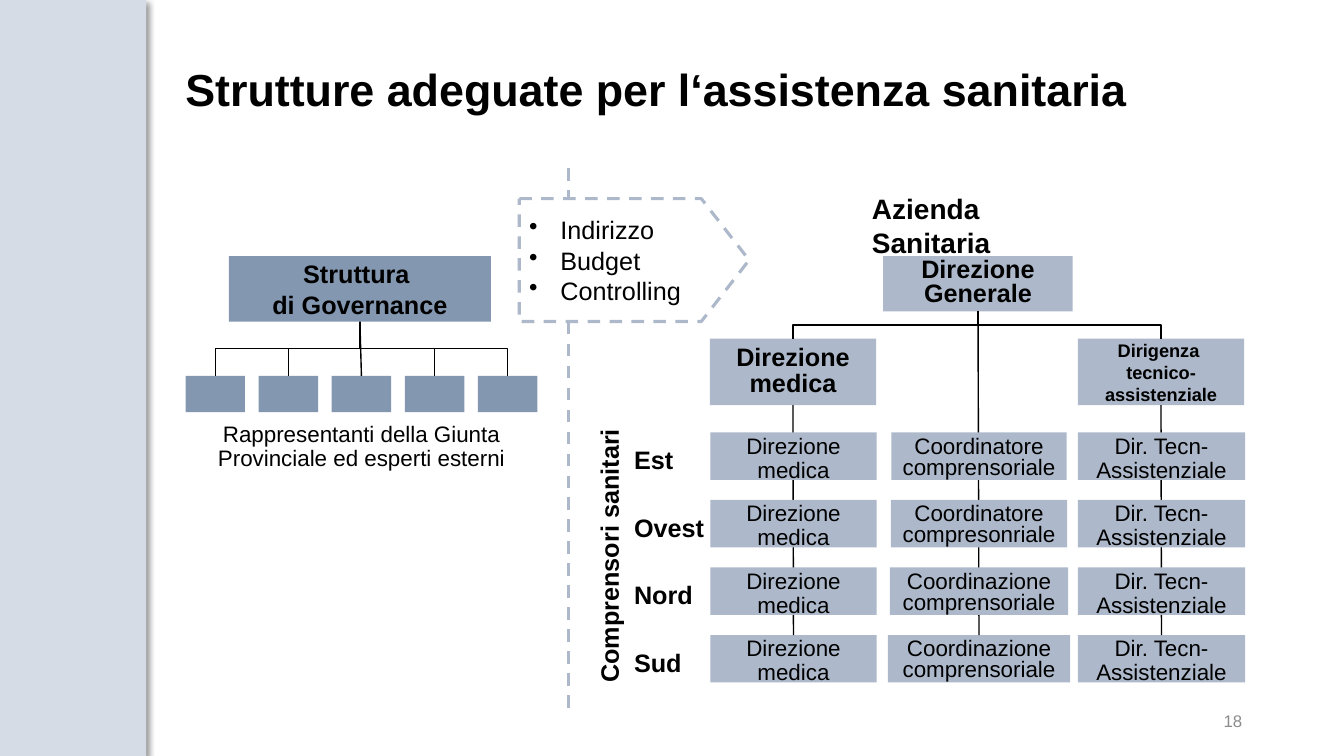
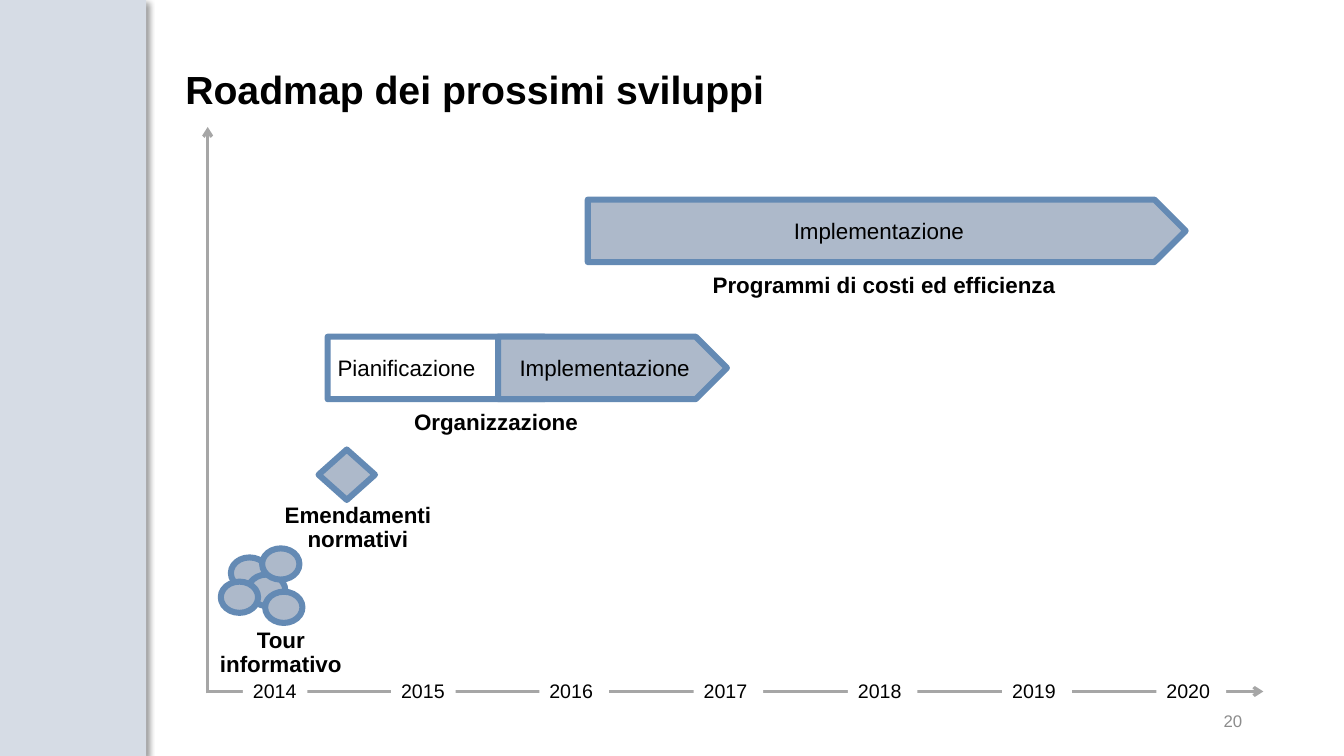
import lxml.etree
import pptx
import pptx.dml.color
import pptx.enum.dml
import pptx.enum.shapes
import pptx.enum.text
import pptx.oxml.ns
import pptx.util

Inches = pptx.util.Inches
Pt = pptx.util.Pt
qn = pptx.oxml.ns.qn
SHAPE = pptx.enum.shapes.MSO_SHAPE
CONNECTOR = pptx.enum.shapes.MSO_CONNECTOR
ALIGN = pptx.enum.text.PP_ALIGN
ANCHOR = pptx.enum.text.MSO_ANCHOR
DASH = pptx.enum.dml.MSO_LINE.DASH

# Shared look
FONT = "Arial"
BLACK, WHITE = "000000", "FFFFFF"
PALE, SOFT, STRONG = "D6DCE5", "ADB9CA", "8497B0"
OUTLINE, AXIS, MUTED = "648AB4", "A6A6A6", "8C8C8C"
OUTLINE_WIDTH = 4.33


def color(hex_value):
    return pptx.dml.color.RGBColor.from_string(hex_value)


# Text
def write(shape, lines, size, bold=False, align=ALIGN.LEFT, spacing=None,
          anchor=ANCHOR.MIDDLE, ink=BLACK, bullet=False):
    frame = shape.text_frame
    frame.word_wrap = True
    frame.vertical_anchor = anchor
    for index, line in enumerate(lines):
        paragraph = frame.paragraphs[0] if index == 0 else frame.add_paragraph()
        paragraph.alignment = align
        if spacing:
            paragraph.line_spacing = spacing
        if bullet:
            properties = paragraph._p.get_or_add_pPr()
            properties.set("marL", str(Inches(0.31)))
            properties.set("indent", str(-Inches(0.31)))
            lxml.etree.SubElement(properties, qn("a:buChar")).set("char", "•")
        run = paragraph.add_run()
        run.text = line
        run.font.name = FONT
        run.font.size = Pt(size)
        run.font.bold = bold
        run.font.color.rgb = color(ink)


def add_label(slide, left, top, width, height, text, size, bold=True,
              anchor=ANCHOR.TOP, **style):
    label = slide.shapes.add_textbox(
        Inches(left), Inches(top), Inches(width), Inches(height))
    write(label, [text], size, bold, anchor=anchor, **style)
    return label


# Shapes
def add_block(slide, left, top, width, height, fill=None, kind=SHAPE.RECTANGLE,
              outline=None, weight=OUTLINE_WIDTH):
    block = slide.shapes.add_shape(
        kind, Inches(left), Inches(top), Inches(width), Inches(height))
    block.shadow.inherit = False
    if fill:
        block.fill.solid()
        block.fill.fore_color.rgb = color(fill)
    else:
        block.fill.background()
    if outline:
        block.line.color.rgb = color(outline)
        block.line.width = Pt(weight)
    else:
        block.line.fill.background()
    return block


def add_box(slide, left, top, width, height, fill, lines, size, bold=True,
            spacing=None):
    box = add_block(slide, left, top, width, height, fill)
    write(box, lines, size, bold, ALIGN.CENTER, spacing)
    return box


# Lines
def style_line(line, ink, weight, dash=None, arrow=False):
    line.line.color.rgb = color(ink)
    line.line.width = Pt(weight)
    if dash:
        line.line.dash_style = dash
    properties = line._element.spPr
    if arrow:
        end = lxml.etree.SubElement(properties.find(qn("a:ln")), qn("a:tailEnd"))
        end.set("type", "arrow")
    lxml.etree.SubElement(properties, qn("a:effectLst"))


def add_line(slide, x1, y1, x2, y2, ink, **style):
    line = slide.shapes.add_connector(
        CONNECTOR.STRAIGHT, Inches(x1), Inches(y1), Inches(x2), Inches(y2))
    style_line(line, ink, 2.25, **style)


def link(slide, upper, lower, kind=CONNECTOR.STRAIGHT):
    line = slide.shapes.add_connector(kind, 0, 0, 0, 0)
    line.begin_connect(upper, 2)
    line.end_connect(lower, 0)
    if kind == CONNECTOR.ELBOW:
        turn_downward(line)
    style_line(line, BLACK, 1)


def turn_downward(line):
    """Rotate an elbow so that it leaves and arrives vertically."""
    across, down = line.end_x - line.begin_x, line.end_y - line.begin_y
    middle_x = (line.begin_x + line.end_x) // 2
    middle_y = (line.begin_y + line.end_y) // 2
    line.left, line.top = middle_x - down // 2, middle_y - abs(across) // 2
    line.width, line.height = down, abs(across)
    frame = line._element.spPr.find(qn("a:xfrm"))
    frame.attrib.pop("flipV", None)
    frame.set("rot", str((270 if across > 0 else 90) * 60000))
    frame.set("flipH", "1" if across > 0 else "0")


# Elements common to every slide
def add_sidebar(slide):
    sidebar = add_block(slide, 0, 0, 1.45, 7.5, PALE)
    effects = sidebar._element.spPr.find(qn("a:effectLst"))
    shadow = lxml.etree.SubElement(effects, qn("a:outerShdw"))
    for key, value in (("blurRad", Pt(4)), ("dist", Pt(3)),
                       ("dir", 45 * 60000), ("rotWithShape", 0)):
        shadow.set(key, str(value))
    tint = lxml.etree.SubElement(shadow, qn("a:srgbClr"))
    tint.set("val", BLACK)
    lxml.etree.SubElement(tint, qn("a:alpha")).set("val", "40000")


def start_slide(deck, title, title_size, number):
    slide = deck.slides.add_slide(deck.slide_layouts[6])
    add_sidebar(slide)
    add_label(slide, 9.42, 6.95, 3, 0.4, number, 12, False, ANCHOR.MIDDLE,
              align=ALIGN.RIGHT, ink=MUTED)
    add_label(slide, 1.74, 0.4, 10.96, 1.03, title, title_size,
              anchor=ANCHOR.MIDDLE, spacing=0.9)
    return slide


# Organisation chart
def add_governance(slide):
    governance = add_box(slide, 2.27, 2.54, 2.6, 0.65, STRONG,
                         ["Struttura ", "di Governance"], 18)
    for seat in range(5):
        member = add_block(slide, 1.84 + 0.725 * seat, 3.73, 0.59, 0.36, STRONG)
        link(slide, governance, member,
             CONNECTOR.STRAIGHT if seat == 2 else CONNECTOR.ELBOW)
    add_label(slide, 1.8, 4.15, 3.57, 0.57,
              "Rappresentanti della Giunta Provinciale ed esperti esterni",
              16, False, align=ALIGN.CENTER, spacing=Pt(17))


def add_district_column(slide, head, center, widths, texts, spacing):
    # The lowest box comes first, so that the line runs behind the others
    for row in (3, 0, 1, 2):
        box = add_block(slide, center - widths[row] / 2, 4.29 + 0.67 * row,
                        widths[row], 0.47, SOFT)
        write(box, [texts[row]], 16, align=ALIGN.CENTER, spacing=Pt(spacing))
        box.text_frame.margin_top = Inches(0.1)
        if row == 3:
            link(slide, head, box)


def add_health_authority(slide):
    add_label(slide, 8.55, 1.85, 2.2, 0.76, "Azienda Sanitaria", 20)
    general = add_box(slide, 8.76, 2.54, 1.88, 0.55, SOFT,
                      ["Direzione Generale"], 18, spacing=Pt(17))
    medical = add_box(slide, 7.04, 3.36, 1.65, 0.66, SOFT,
                      ["Direzione medica"], 18, spacing=Pt(18))
    nursing = add_box(slide, 10.69, 3.36, 1.65, 0.66, SOFT,
                      ["Dirigenza ", "tecnico-assistenziale"], 13)
    for division in (medical, nursing):
        link(slide, general, division, CONNECTOR.ELBOW)

    coordinators = ["Coordinatore comprensoriale", "Coordinatore compresonriale",
                    "Coordinazione comprensoriale", "Coordinazione comprensoriale"]
    add_district_column(slide, general, 9.71, [1.74, 1.75, 1.77, 1.81],
                        coordinators, 15)
    add_district_column(slide, medical, 7.87, [1.65] * 4,
                        ["Direzione medica"] * 4, 17)
    add_district_column(slide, nursing, 11.52, [1.66] * 4,
                        ["Dir. Tecn-Assistenziale"] * 4, 17)

    for row, district in enumerate(["Est", "Ovest", "Nord", "Sud"]):
        add_label(slide, 6.19, 4.36 + 0.67 * row, 0.95, 0.4, district, 18)
    districts = add_label(slide, 4.66, 5.29, 2.76, 0.4, "Comprensori sanitari", 18)
    districts.rotation = 270


def build_structure_slide(deck):
    slide = start_slide(deck, "Strutture adeguate per l‘assistenza sanitaria", 32, "18")
    add_line(slide, 5.64, 1.67, 5.64, 7.05, SOFT, dash=DASH)
    add_governance(slide)
    add_health_authority(slide)
    mandate = add_block(slide, 5.15, 1.97, 2.28, 1.22, WHITE, SHAPE.PENTAGON,
                        SOFT, 2.25)
    mandate.adjustments[0] = 0.389
    mandate.line.dash_style = DASH
    write(mandate, ["Indirizzo", "Budget", "Controlling"], 18, bullet=True)


# Roadmap
def add_phase(slide, left, top, width, text, fill=SOFT, align=ALIGN.CENTER):
    phase = add_block(slide, left, top, width, 0.62, fill, SHAPE.PENTAGON, OUTLINE)
    write(phase, [text], 16, align=align)


def add_caption(slide, left, top, width, text, align=ALIGN.CENTER):
    add_label(slide, left, top, width, 0.34, text, 16, align=align, spacing=Pt(17))


def add_time_axis(slide):
    add_line(slide, 2.06, 6.88, 2.06, 1.26, AXIS, arrow=True)
    add_line(slide, 2.06, 6.86, 12.53, 6.86, AXIS, arrow=True)
    for year in range(2014, 2021):
        early = year < 2016
        left = 5.35 + (year - 2016) * (1.47 if early else 1.53)
        tick = add_block(slide, left, 6.69, 0.64 if early else 0.69, 0.34, WHITE)
        write(tick, [str(year)], 14, anchor=ANCHOR.TOP)


def build_roadmap_slide(deck):
    slide = start_slide(deck, "Roadmap dei prossimi sviluppi", 28, "20")
    add_time_axis(slide)

    for left, top in [(2.29, 5.53), (2.46, 5.7), (2.63, 5.87), (2.19, 5.77), (2.6, 5.44)]:
        add_block(slide, left, top, 0.37, 0.31, SOFT, SHAPE.OVAL, OUTLINE)
    add_caption(slide, 2.01, 6.19, 1.55, "Tour informativo")

    add_block(slide, 3.16, 4.46, 0.56, 0.5, SOFT, SHAPE.DIAMOND, OUTLINE)
    add_caption(slide, 2.7, 4.95, 1.7, "Emendamenti normativi")

    add_phase(slide, 3.25, 3.34, 2.46, "Pianificazione", None, ALIGN.LEFT)
    add_phase(slide, 4.94, 3.34, 2.27, "Implementazione")
    add_caption(slide, 3.29, 4.03, 3.26, "Organizzazione")

    add_phase(slide, 5.83, 1.98, 5.93, "Implementazione")
    add_caption(slide, 6.97, 2.67, 3.72, "Programmi di costi ed efficienza", ALIGN.LEFT)


def main():
    deck = pptx.Presentation()
    deck.slide_width, deck.slide_height = Inches(13.33), Inches(7.5)
    build_structure_slide(deck)
    build_roadmap_slide(deck)
    deck.save("out.pptx")


if __name__ == "__main__":
    main()
